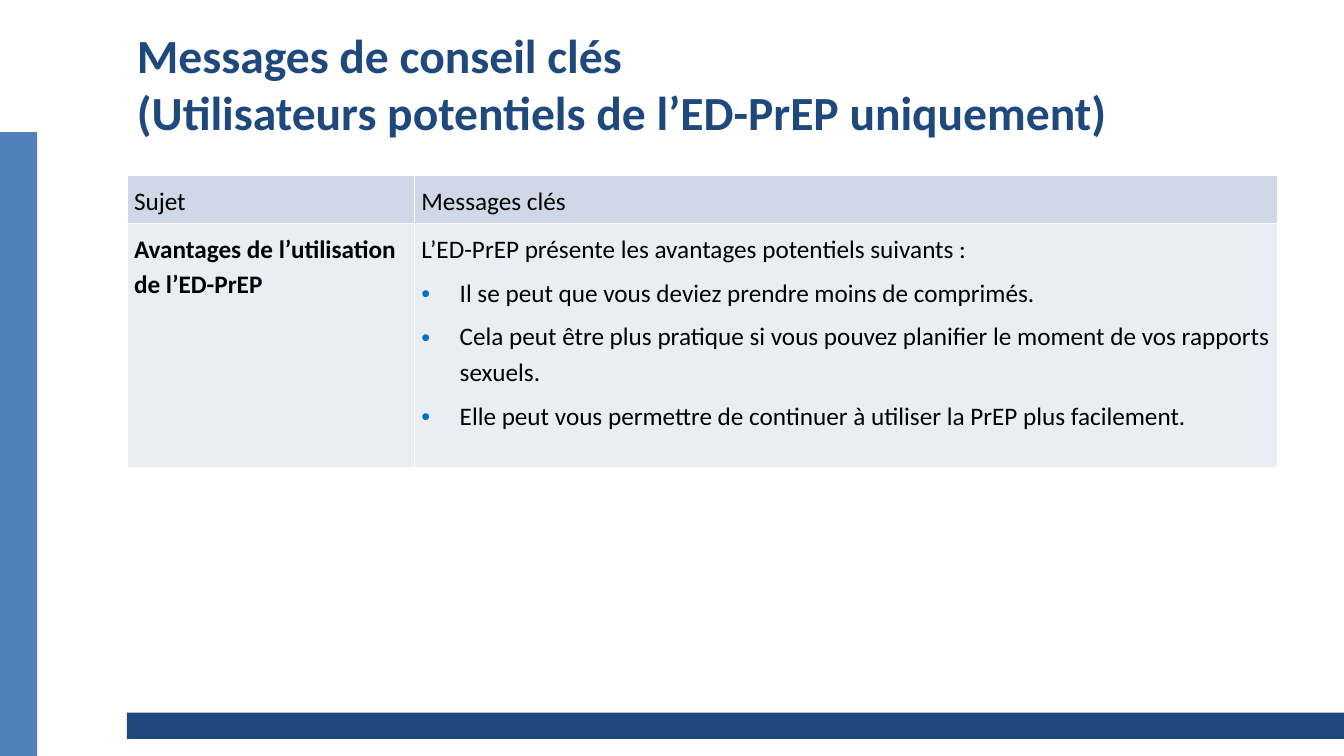
import pptx
import pptx.dml.color
import pptx.enum.shapes
import pptx.enum.text
import pptx.oxml
import pptx.oxml.ns
import pptx.util

Inches = pptx.util.Inches
Pt = pptx.util.Pt
RGBColor = pptx.dml.color.RGBColor

BLUE = RGBColor(0x4F, 0x81, 0xBD)
NAVY = RGBColor(0x1F, 0x49, 0x7D)
BLACK = RGBColor(0, 0, 0)
WHITE = RGBColor(0xFF, 0xFF, 0xFF)
BULLET = RGBColor(0x00, 0x70, 0xC0)
HEADER_FILL = RGBColor(0xD0, 0xD8, 0xE8)
BODY_FILL = RGBColor(0xE9, 0xED, 0xF4)

FONT = "Calibri"
LEFT, WIDTH = 1.26, 11.41
COLUMNS = [2.85, 8.56]
ROWS = [0.48, 2.42]

TITLE = "Messages de conseil clés\v(Utilisateurs potentiels de l’ED-PrEP uniquement)"
SUBJECT = "Avantages de l’utilisation de l’ED-PrEP"
INTRO = "L’ED-PrEP présente les avantages potentiels suivants\u00a0:"
BENEFITS = [
    "Il se peut que vous deviez prendre moins de comprimés.",
    "Cela peut être plus pratique si vous pouvez planifier le moment de vos rapports sexuels.",
    "Elle peut vous permettre de continuer à utiliser la PrEP plus facilement.",
]


def add_xml(parent, xml):
    ns = pptx.oxml.ns.nsdecls("a")
    parent.append(pptx.oxml.parse_xml(xml.replace("NS", ns, 1)))


def style(p, size, color, bold=False):
    p.font.name = FONT
    p.font.size = Pt(size)
    p.font.bold = bold
    p.font.color.rgb = color


def add_bar(s, left, top, width, height, color):
    sp = s.shapes.add_shape(pptx.enum.shapes.MSO_SHAPE.RECTANGLE,
                            Inches(left), Inches(top), Inches(width), Inches(height))
    sp.shadow.inherit = False
    sp.fill.solid()
    sp.fill.fore_color.rgb = color
    sp.line.fill.background()


def add_title(s):
    sp = s.shapes.add_textbox(Inches(LEFT), Inches(0.35), Inches(WIDTH), Inches(0.94))
    tf = sp.text_frame
    tf.word_wrap = True
    tf.vertical_anchor = pptx.enum.text.MSO_ANCHOR.MIDDLE
    p = tf.paragraphs[0]
    p.text = TITLE
    style(p, 34, NAVY, bold=True)


def add_bullet(p):
    p.space_before = Pt(6)
    pPr = p._p.get_or_add_pPr()
    pPr.set("marL", str(Inches(0.38)))
    pPr.set("indent", str(-Inches(0.38)))
    add_xml(pPr, f'<a:buClr NS><a:srgbClr val="{BULLET}"/></a:buClr>')
    add_xml(pPr, '<a:buFont NS typeface="Arial"/>')
    add_xml(pPr, '<a:buChar NS char="•"/>')


def fill_cell(cell, lines, color, bold=False):
    cell.margin_left = cell.margin_right = Inches(0.07)
    cell.margin_top = cell.margin_bottom = Inches(0.06)
    # Borders come before the fill in the cell properties
    tcPr = cell._tc.get_or_add_tcPr()
    for side in ("lnL", "lnR", "lnT", "lnB"):
        add_xml(tcPr, f'<a:{side} NS w="{Pt(1)}"><a:solidFill>'
                      f'<a:srgbClr val="{WHITE}"/></a:solidFill></a:{side}>')
    cell.fill.solid()
    cell.fill.fore_color.rgb = color
    # The first line is plain, the following ones are bulleted
    tf = cell.text_frame
    for i, line in enumerate(lines):
        p = tf.add_paragraph() if i else tf.paragraphs[0]
        p.text = line
        p.line_spacing = 1.15
        style(p, 18, BLACK, bold)
        if i:
            add_bullet(p)


def add_message_table(s):
    frame = s.shapes.add_table(len(ROWS), len(COLUMNS), Inches(LEFT), Inches(1.74),
                               Inches(WIDTH), Inches(sum(ROWS)))
    table = frame.table
    for column, width in zip(table.columns, COLUMNS):
        column.width = Inches(width)
    for row, height in zip(table.rows, ROWS):
        row.height = Inches(height)
    fill_cell(table.cell(0, 0), ["Sujet"], HEADER_FILL)
    fill_cell(table.cell(0, 1), ["Messages clés"], HEADER_FILL)
    fill_cell(table.cell(1, 0), [SUBJECT], BODY_FILL, bold=True)
    fill_cell(table.cell(1, 1), [INTRO] + BENEFITS, BODY_FILL)


def main():
    prs = pptx.Presentation()
    prs.slide_width = Inches(13.33)
    prs.slide_height = Inches(7.5)
    s = prs.slides.add_slide(prs.slide_layouts[6])

    # Side and bottom bars
    add_bar(s, 0, 1.31, 0.37, 6.19, BLUE)
    add_bar(s, LEFT, 7.07, 12.07, 0.26, NAVY)

    # Content
    add_title(s)
    add_message_table(s)
    prs.save("out.pptx")


if __name__ == "__main__":
    main()
